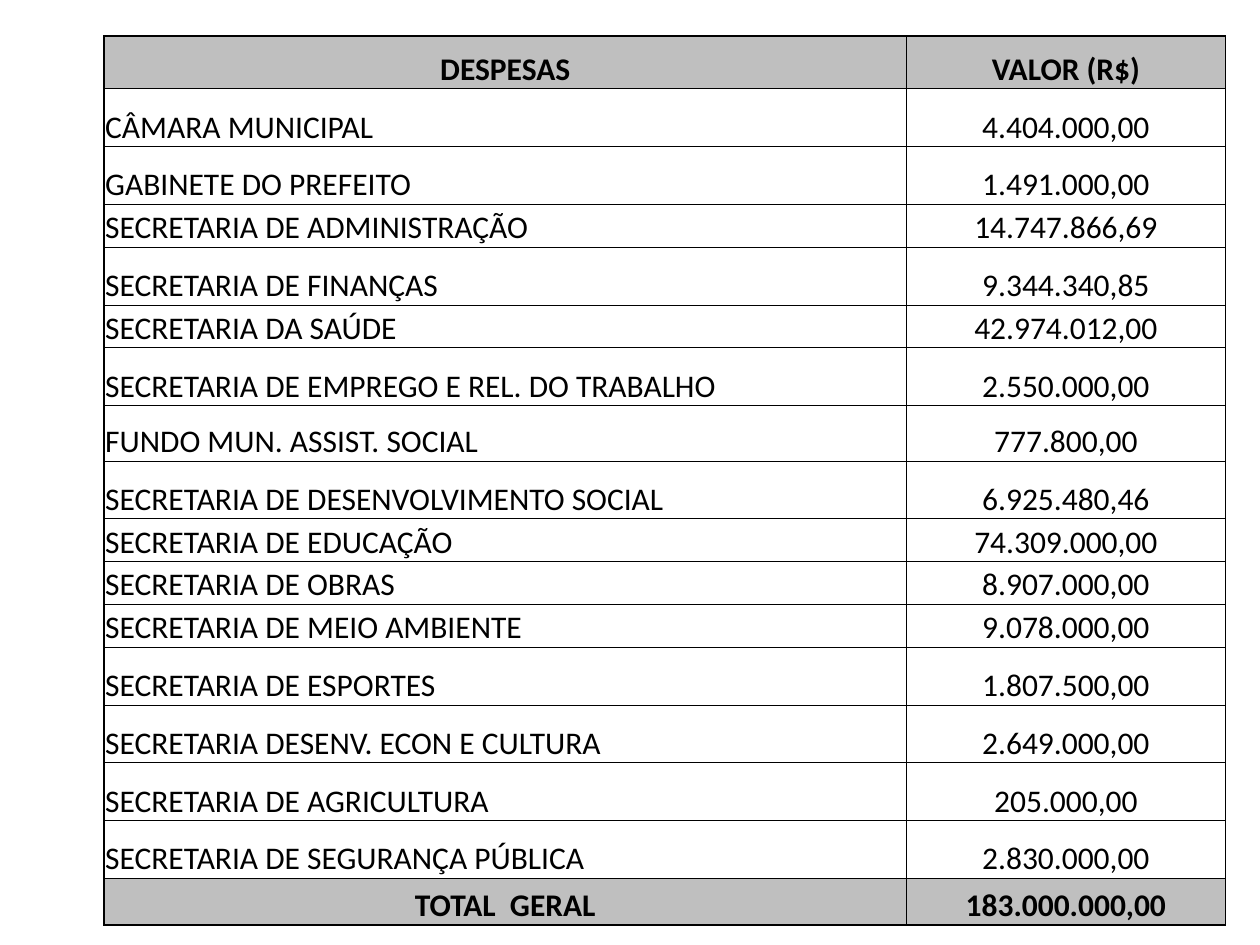
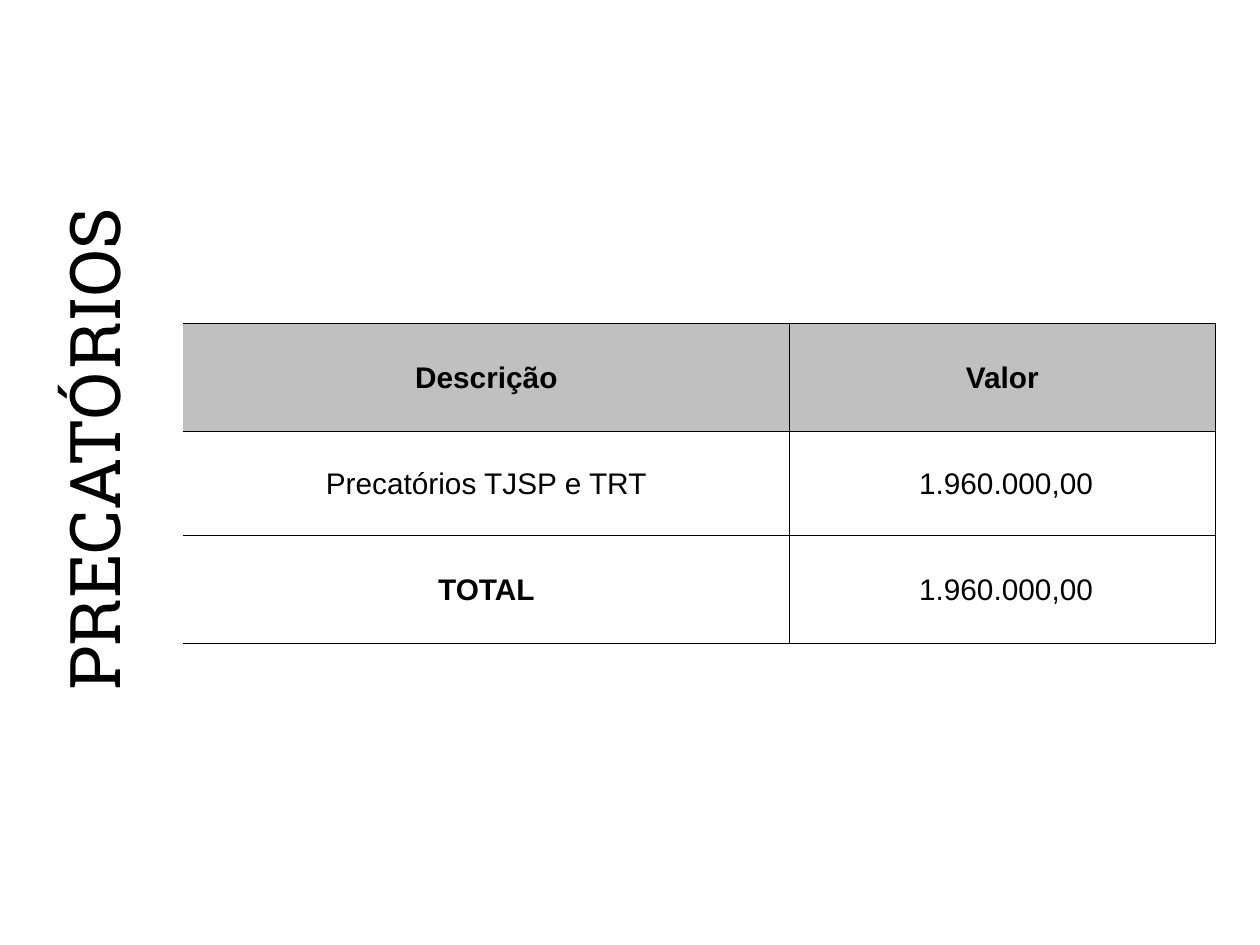
from dataclasses import dataclass
from lxml.etree import SubElement
from pptx import Presentation
from pptx.dml.color import RGBColor
from pptx.enum.text import MSO_ANCHOR, MSO_AUTO_SIZE, PP_ALIGN
from pptx.oxml.ns import qn
from pptx.util import Inches, Pt

BLACK = RGBColor(0x00, 0x00, 0x00)
EXPENSE_GREY = RGBColor(0xBF, 0xBF, 0xBF)
COURT_GREY = RGBColor(0xC0, 0xC0, 0xC0)

GRID_COLUMNS, GRID_ROWS = 100, 75
THIN, THICK = 0.5, 1
TALL, MEDIUM, SHORT = 4.59, 4.4, 3.4
CELL_MARGIN = 0.01

EXPENSES = [
    ("DESPESAS", "VALOR (R$)", 4.2),
    ("CÂMARA MUNICIPAL", "4.404.000,00", TALL),
    ("GABINETE DO PREFEITO", "1.491.000,00", TALL),
    ("SECRETARIA DE ADMINISTRAÇÃO", "14.747.866,69", SHORT),
    ("SECRETARIA DE FINANÇAS", "9.344.340,85", TALL),
    ("SECRETARIA DA SAÚDE", "42.974.012,00", SHORT),
    ("SECRETARIA DE EMPREGO E REL. DO TRABALHO", "2.550.000,00", TALL),
    ("FUNDO MUN. ASSIST. SOCIAL", "777.800,00", MEDIUM),
    ("SECRETARIA DE DESENVOLVIMENTO SOCIAL", "6.925.480,46", TALL),
    ("SECRETARIA DE EDUCAÇÃO", "74.309.000,00", SHORT),
    ("SECRETARIA DE OBRAS", "8.907.000,00", SHORT),
    ("SECRETARIA DE MEIO AMBIENTE", "9.078.000,00", SHORT),
    ("SECRETARIA DE ESPORTES", "1.807.500,00", TALL),
    ("SECRETARIA DESENV. ECON E CULTURA", "2.649.000,00", TALL),
    ("SECRETARIA DE AGRICULTURA", "205.000,00", TALL),
    ("SECRETARIA DE SEGURANÇA PÚBLICA", "2.830.000,00", TALL),
    ("TOTAL  GERAL", "183.000.000,00", 3.7),
]

COURT_DEBTS = [
    ("Descrição", "Valor", 8.55),
    ("Precatórios TJSP e TRT", "1.960.000,00", 8.25),
    ("TOTAL", "1.960.000,00", 8.55),
]


@dataclass
class TableLook:
    font: str
    size: int
    shade: RGBColor
    anchor: MSO_ANCHOR
    label_align: PP_ALIGN
    shaded_rows: set
    bold_cells: set
    outer_left: float
    outer: float
    value_indent: float = 0


class Deck:
    def __init__(self):
        self.presentation = Presentation()
        self.presentation.slide_width = Inches(10)
        self.presentation.slide_height = Inches(7.5)
        self.slide = None

    def across(self, columns):
        return round(self.presentation.slide_width * columns / GRID_COLUMNS)

    def down(self, rows):
        return round(self.presentation.slide_height * rows / GRID_ROWS)

    def add_slide(self):
        self.slide = self.presentation.slides.add_slide(
            self.presentation.slide_layouts.get_by_name("Blank"))

    def side_title(self, text, left, top, width, height):
        frame = self.slide.shapes.add_textbox(
            self.across(left), self.down(top),
            self.across(width), self.down(height)).text_frame
        frame.text = text
        frame.word_wrap = False
        frame.auto_size = MSO_AUTO_SIZE.SHAPE_TO_FIT_TEXT
        frame._txBody.bodyPr.set("vert", "vert270")
        self.style(frame.paragraphs[0], "Roboto Slab", 40, False, PP_ALIGN.CENTER)

    def style(self, paragraph, font, size, bold, align):
        paragraph.alignment = align
        paragraph.font.name = font
        paragraph.font.size = Pt(size)
        paragraph.font.bold = bold
        paragraph.font.color.rgb = BLACK

    def border(self, cell, side, width):
        line = SubElement(cell._tc.get_or_add_tcPr(), qn(f"a:ln{side}"), w=str(Pt(width)))
        if width:
            fill = SubElement(line, qn("a:solidFill"))
            SubElement(fill, qn("a:srgbClr"), val=str(BLACK))
        else:
            SubElement(line, qn("a:noFill"))

    def table(self, entries, left, top, widths, look):
        height = sum(entry[-1] for entry in entries)
        table = self.slide.shapes.add_table(
            len(entries), len(widths), self.across(left), self.down(top),
            self.across(sum(widths)), self.down(height)).table
        table.first_row = table.horz_banding = False
        for column, width in zip(table.columns, widths):
            column.width = self.across(width)
        last_row, last_column = len(entries) - 1, len(widths) - 1
        for r, (*texts, row_height) in enumerate(entries):
            table.rows[r].height = self.down(row_height)
            for c, text in enumerate(texts):
                cell = table.cell(r, c)
                cell.text = text
                cell.vertical_anchor = look.anchor
                indent = look.value_indent if r and c else 0
                cell.margin_left = Inches(CELL_MARGIN + indent)
                cell.margin_right = cell.margin_top = Inches(CELL_MARGIN)
                cell.margin_bottom = 0
                plain_label = c == 0 and r not in (0, last_row)
                align = look.label_align if plain_label else PP_ALIGN.CENTER
                self.style(cell.text_frame.paragraphs[0], look.font, look.size,
                           (r, c) in look.bold_cells, align)
                self.border(cell, "L", look.outer_left if c == 0 else THIN)
                self.border(cell, "R", look.outer if c == last_column else THIN)
                self.border(cell, "T", look.outer if r == 0 else THIN)
                self.border(cell, "B", look.outer if r == last_row else THIN)
                if r in look.shaded_rows:
                    cell.fill.solid()
                    cell.fill.fore_color.rgb = look.shade
                else:
                    cell.fill.background()


def main():
    deck = Deck()

    deck.add_slide()
    total_row = len(EXPENSES) - 1
    deck.table(EXPENSES, 8.25, 2.85, (63.7, 25.3), TableLook(
        font="Calibri", size=18, shade=EXPENSE_GREY, anchor=MSO_ANCHOR.BOTTOM,
        label_align=PP_ALIGN.LEFT, shaded_rows={0, total_row},
        bold_cells={(r, c) for r in (0, total_row) for c in (0, 1)},
        outer_left=THICK, outer=THICK))

    deck.add_slide()
    deck.side_title("PRECATÓRIOS", 3.5, 16, 8.8, 39.4)
    deck.table(COURT_DEBTS, 14.55, 25.7, (48.1, 33.8), TableLook(
        font="Arial", size=17, shade=COURT_GREY, anchor=MSO_ANCHOR.MIDDLE,
        label_align=PP_ALIGN.CENTER, shaded_rows={0},
        bold_cells={(0, 0), (0, 1), (2, 0)}, outer_left=0, outer=THIN,
        value_indent=0.06))

    deck.presentation.save("out.pptx")


if __name__ == "__main__":
    main()
